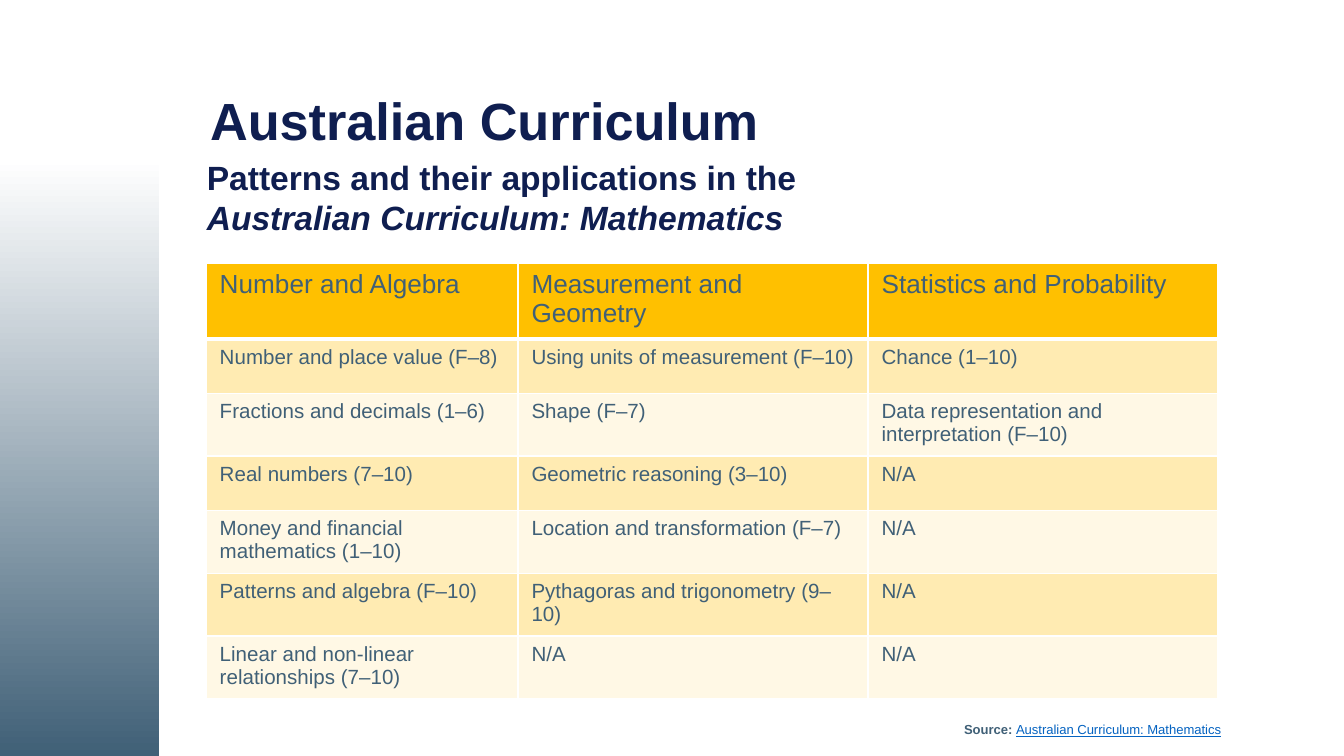
from dataclasses import dataclass

from lxml.etree import SubElement
from pptx import Presentation
from pptx.dml.color import RGBColor
from pptx.enum.shapes import MSO_SHAPE
from pptx.enum.text import MSO_ANCHOR
from pptx.oxml import parse_xml
from pptx.oxml.ns import nsdecls, qn
from pptx.util import Emu, Pt

PX = 4572  # EMU per px, 200 px to the inch


@dataclass(frozen=True)
class Theme:
    font: str = "Arial"
    navy: str = "0F1E50"
    slate: str = "406077"
    amber: str = "FFC000"
    white: str = "FFFFFF"
    link: str = "0563C1"
    title: int = 28
    subtitle: int = 18
    header: int = 14
    body: int = 11
    source: int = 7
    border: int = 1
    header_rule: int = 3
    band_alpha: tuple = (30, 10)


T = Theme()

HEADERS = ["Number and Algebra", "Measurement and Geometry",
           "Statistics and Probability"]
STRANDS = [
    ["Number and place value (F–8)", "Using units of measurement (F–10)",
     "Chance (1–10)"],
    ["Fractions and decimals (1–6)", "Shape (F–7)",
     "Data representation and interpretation (F–10)"],
    ["Real numbers (7–10)", "Geometric reasoning (3–10)", "N/A"],
    ["Money and financial mathematics (1–10)",
     "Location and transformation (F–7)", "N/A"],
    ["Patterns and algebra (F–10)", "Pythagoras and trigonometry (9–10)",
     "N/A"],
    ["Linear and non-linear relationships (7–10)", "N/A", "N/A"],
]


def emu(*lengths):
    return [Emu(n * PX) for n in lengths]


def add_run(p, text, size, color, bold=False, italic=False, underline=False):
    r = p.add_run()
    r.text = text
    f = r.font
    f.name, f.size = T.font, Pt(size)
    f.bold, f.italic, f.underline = bold, italic, underline
    f.color.rgb = RGBColor.from_string(color)


def add_text_box(s, box, wrap=True):
    tf = s.shapes.add_textbox(*emu(*box)).text_frame
    tf.word_wrap = wrap
    return tf


def side_panel(s, box):
    sp = s.shapes.add_shape(MSO_SHAPE.RECTANGLE, *emu(*box))
    sp.shadow.inherit = False
    sp.line.fill.background()
    sp.fill.gradient()
    sp.fill.gradient_angle = 90
    stops = [(0, T.slate), (0.79, T.white)]
    for stop, (position, color) in zip(sp.fill.gradient_stops, stops):
        stop.position = position
        stop.color.rgb = RGBColor.from_string(color)


def heading(s, box):
    x, y, w, h = box
    # Title
    tf = add_text_box(s, (x + 5, y, w - 5, 206))
    tf.vertical_anchor = MSO_ANCHOR.MIDDLE
    p = tf.paragraphs[0]
    p.line_spacing = 0.9
    add_run(p, "Australian Curriculum", T.title, T.navy, bold=True)
    # Subtitle, two lines
    p = add_text_box(s, (x, y + 142, 1530, h - 142)).paragraphs[0]
    add_run(p, "Patterns and their applications in the ", T.subtitle, T.navy,
            bold=True)
    p.add_line_break()
    add_run(p, "Australian Curriculum: Mathematics", T.subtitle, T.navy,
            bold=True, italic=True)


def style_cell(cell, text, size, alpha, bottom):
    add_run(cell.text_frame.paragraphs[0], text, size, T.slate)
    cell.fill.solid()
    cell.fill.fore_color.rgb = RGBColor.from_string(T.amber)
    tc_pr = cell._tc.get_or_add_tcPr()
    if alpha < 100:
        color = tc_pr.find(qn("a:solidFill")).find(qn("a:srgbClr"))
        SubElement(color, qn("a:alpha"), val=str(alpha * 1000))
    # Borders come before the fill
    for i, side in enumerate("LRTB"):
        width = Pt(bottom if side == "B" else T.border)
        tc_pr.insert(i, parse_xml(
            f'<a:ln{side} {nsdecls("a")} w="{width}"><a:solidFill>'
            f'<a:srgbClr val="{T.white}"/></a:solidFill></a:ln{side}>'))


def strand_table(s, box):
    x, y, w, h = box
    rows = [HEADERS, *STRANDS]
    table = s.shapes.add_table(len(rows), len(HEADERS), *emu(*box)).table
    table.first_row = table.horz_banding = False
    first = 464
    rest = (w - first) // 2
    for column, width in zip(table.columns, emu(first, rest, rest)):
        column.width = width
    for i, texts in enumerate(rows):
        table.rows[i].height = Emu(h * PX // len(rows))
        size = T.body if i else T.header
        alpha = T.band_alpha[(i - 1) % 2] if i else 100
        bottom = T.border if i else T.header_rule
        for j, text in enumerate(texts):
            style_cell(table.cell(i, j), text, size, alpha, bottom)


def source_line(s, box):
    p = add_text_box(s, box, wrap=False).paragraphs[0]
    add_run(p, "Source: ", T.source, T.slate, bold=True)
    add_run(p, "Australian Curriculum: Mathematics", T.source, T.link,
            underline=True)


def main():
    prs = Presentation()
    prs.slide_width, prs.slide_height = emu(2000, 1125)
    s = prs.slides.add_slide(prs.slide_layouts[6])
    side_panel(s, (0, 0, 237, 1125))
    heading(s, (288, 81, 1668, 284))
    strand_table(s, (307, 391, 1506, 567))
    source_line(s, (1415, 1064, 426, 44))
    prs.save("out.pptx")


if __name__ == "__main__":
    main()
